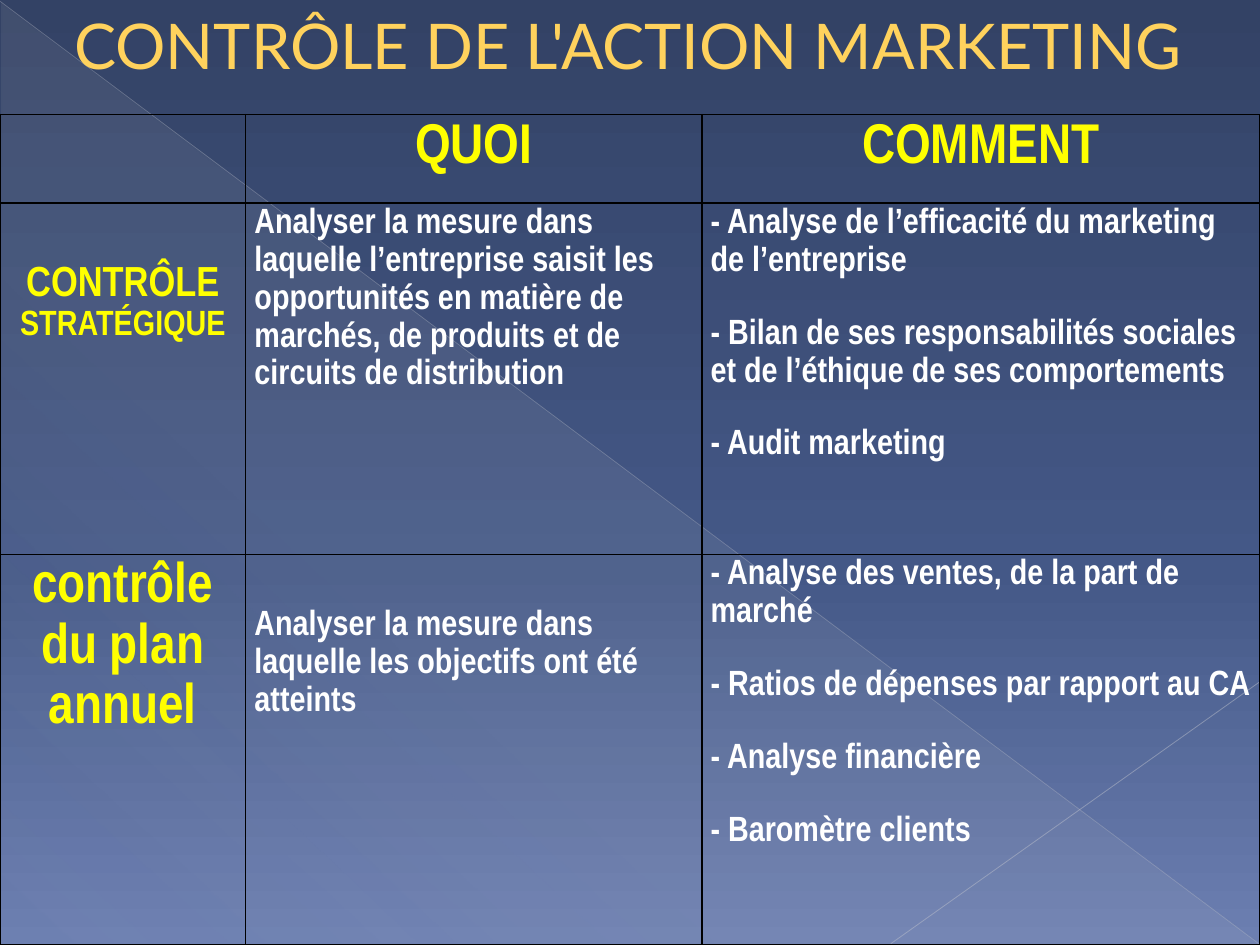
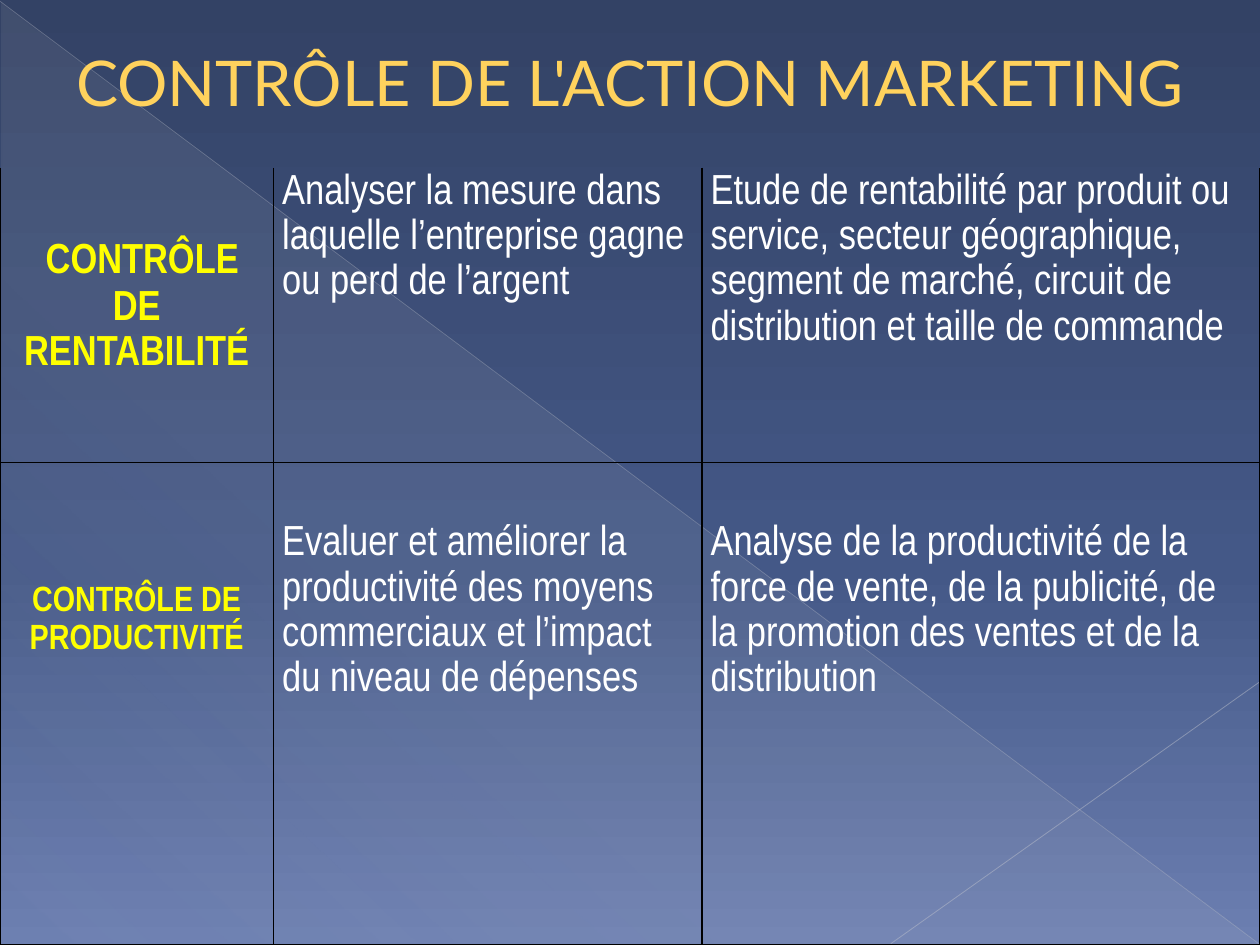
from lxml import etree
from pptx import Presentation
from pptx.dml.color import RGBColor
from pptx.enum.shapes import MSO_CONNECTOR, MSO_SHAPE
from pptx.enum.text import MSO_ANCHOR, PP_ALIGN
from pptx.oxml.ns import qn
from pptx.util import Inches, Pt

CENTER, LEFT = PP_ALIGN.CENTER, PP_ALIGN.LEFT
MIDDLE = MSO_ANCHOR.MIDDLE
STRAIGHT = MSO_CONNECTOR.STRAIGHT
RIGHT_TRIANGLE = MSO_SHAPE.RIGHT_TRIANGLE

GOLD = RGBColor(0xFF, 0xD2, 0x5D)
YELLOW = RGBColor(0xFF, 0xFF, 0x00)
WHITE = RGBColor(0xFF, 0xFF, 0xFF)
BLACK = RGBColor(0x00, 0x00, 0x00)
NIGHT = RGBColor(0x33, 0x42, 0x65)
NAVY = RGBColor(0x44, 0x58, 0x87)
PERIWINKLE = RGBColor(0x6C, 0x7F, 0xB1)
MIST = RGBColor(0xD4, 0xD4, 0xD6)
LONG_RAY = RGBColor(0xB9, 0xBD, 0xC8)
SHORT_RAY = RGBColor(0xC1, 0xC4, 0xCE)

TITLE = "CONTRÔLE DE L'ACTION MARKETING"
TITLE_FONT, TABLE_FONT = "Lato", "Arial Narrow"
NO_STYLE = "{2D5ABB26-0587-4C30-8999-92F81FD0307C}"
LINE_SPACING, PARAGRAPH_GAP = 1.15, Pt(10)

BACKGROUND_STOPS = [(0, NIGHT, 100), (60, NAVY, 100), (100, PERIWINKLE, 100)]
TRIANGLE_STOPS = [(0, MIST, 10), (70, MIST, 8), (100, MIST, 1)]
RAYS = [
    ((0, 0.01), (9.99, 7.49), LONG_RAY, 0.39, 35),
    ((10, 5.41), (7.07, 7.49), SHORT_RAY, 0.47, 45),
]


def heading(*runs, top=0):
    return {"paragraphs": [runs], "color": YELLOW, "bold": True, "align": CENTER, "top": top}


def body(*texts, size=20, bold=True, top=0):
    return {"paragraphs": [[(text, size)] for text in texts],
            "color": WHITE, "bold": bold, "align": LEFT, "top": top}


SLIDES = [
    {
        "title_box": (0.47, 0, 9.03, 0.71),
        "top": 0.91,
        "columns": [1.95, 3.62, 4.43],
        "rows": [0.7, 2.79, 3.1],
        "top_border": True,
        "cells": [
            [None, heading(("QUOI", 32)), heading(("COMMENT", 32))],
            [
                heading(("CONTRÔLE ", 24), ("STRATÉGIQUE", 20), top=0.45),
                body("Analyser la mesure dans laquelle l’entreprise saisit les opportunités "
                     "en matière de marchés, de produits et de circuits de distribution"),
                body("- Analyse de l’efficacité du marketing de l’entreprise",
                     "- Bilan de ses responsabilités sociales et de l’éthique de ses comportements",
                     "- Audit marketing"),
            ],
            [
                heading(("contrôle du plan annuel", 32)),
                body("Analyser la mesure dans laquelle les objectifs ont été atteints", top=0.4),
                body("- Analyse des ventes, de la part de marché",
                     "- Ratios de dépenses par rapport au CA",
                     "- Analyse financière",
                     "- Baromètre clients"),
            ],
        ],
    },
    {
        "title_box": (0.5, 0.29, 9, 0.71),
        "top": 1.33,
        "columns": [2.17, 3.4, 4.43],
        "rows": [2.34, 3.83],
        "top_border": False,
        "cells": [
            [
                heading((" ", 28), ("CONTRÔLE DE RENTABILITÉ", 24), top=0.5),
                body("Analyser la mesure dans laquelle l’entreprise gagne ou perd de l’argent",
                     size=24, bold=False),
                body("Etude de rentabilité par produit ou service, secteur géographique, segment "
                     "de marché, circuit de distribution et taille de commande",
                     size=24, bold=False),
            ],
            [
                heading(("CONTRÔLE DE PRODUCTIVITÉ", 20), top=0.94),
                body("Evaluer et améliorer la productivité des moyens commerciaux et l’impact "
                     "du niveau de dépenses", size=24, bold=False, top=0.45),
                body("Analyse de la productivité de la force de vente, de la publicité, de la "
                     "promotion des ventes et de la distribution", size=24, bold=False, top=0.45),
            ],
        ],
    },
]


def add_color(parent, color, opacity=100):
    element = etree.SubElement(parent, qn("a:srgbClr"), val=str(color))
    if opacity < 100:
        etree.SubElement(element, qn("a:alpha"), val=str(opacity * 1000))


def set_gradient(owner, fill, stops, angle):
    fill.gradient()
    gradient = next(owner.iter(qn("a:gradFill")))
    for child in list(gradient):
        gradient.remove(child)
    stop_list = etree.SubElement(gradient, qn("a:gsLst"))
    for position, color, opacity in stops:
        stop = etree.SubElement(stop_list, qn("a:gs"), pos=str(position * 1000))
        add_color(stop, color, opacity)
    etree.SubElement(gradient, qn("a:lin"), ang=str(angle * 60000), scaled="0")


def add_run(paragraph, text, *, font, size, color, bold=False):
    run = paragraph.add_run()
    run.text = text
    run.font.name = font
    run.font.size = Pt(size)
    run.font.bold = bold
    run.font.color.rgb = color


def decorate_master(master, slide):
    set_gradient(master.element, master.background.fill, BACKGROUND_STOPS, 90)
    triangle = slide.shapes.add_shape(
        RIGHT_TRIANGLE, Inches(0.01), Inches(0.02), Inches(9.99), Inches(7.48))
    triangle.shadow.inherit = False
    triangle.line.fill.background()
    set_gradient(triangle.element, triangle.fill, TRIANGLE_STOPS, 133)
    decorations = [triangle]
    for start, end, color, width, opacity in RAYS:
        ray = slide.shapes.add_connector(STRAIGHT, *map(Inches, start + end))
        ray.line.width = Pt(width)
        ray.line.color.rgb = color
        color_element = next(ray.element.spPr.iter(qn("a:srgbClr")))
        etree.SubElement(color_element, qn("a:alpha"), val=str(opacity * 1000))
        etree.SubElement(ray.element.spPr, qn("a:effectLst"))
        decorations.append(ray)
    for number, shape in enumerate(decorations, start=101):
        next(shape.element.iter(qn("p:cNvPr"))).set("id", str(number))
        master.shapes.element.append(shape.element) if hasattr(master.shapes, "element") \
            else master.placeholders[0].element.getparent().append(shape.element)


def add_title(slide, box):
    title = slide.shapes.title
    title.left, title.top, title.width, title.height = map(Inches, box)
    frame = title.text_frame
    frame.word_wrap = True
    frame.vertical_anchor = MIDDLE
    frame.margin_left = frame.margin_right = 0
    paragraph = frame.paragraphs[0]
    paragraph.alignment = CENTER
    add_run(paragraph, TITLE, font=TITLE_FONT, size=36, color=GOLD)


def set_borders(cell, sides):
    properties = cell._tc.get_or_add_tcPr()
    for index, side in enumerate(sides):
        line = etree.Element(qn(f"a:ln{side}"), w=str(Pt(1)))
        add_color(etree.SubElement(line, qn("a:solidFill")), BLACK)
        properties.insert(index, line)


def fill_cell(cell, content):
    cell.margin_left = cell.margin_right = Inches(0.07)
    cell.margin_top, cell.margin_bottom = Inches(content["top"]), 0
    frame = cell.text_frame
    for index, runs in enumerate(content["paragraphs"]):
        paragraph = frame.add_paragraph() if index else frame.paragraphs[0]
        paragraph.alignment = content["align"]
        paragraph.line_spacing = LINE_SPACING
        paragraph.space_before = PARAGRAPH_GAP
        if len(content["paragraphs"]) > 1:
            paragraph.space_after = PARAGRAPH_GAP
        for text, size in runs:
            add_run(paragraph, text, font=TABLE_FONT, size=size,
                    color=content["color"], bold=content["bold"])


def add_control_table(slide, spec_data):
    columns, rows = spec_data["columns"], spec_data["rows"]
    frame = slide.shapes.add_table(
        len(rows), len(columns), 0, Inches(spec_data["top"]),
        Inches(sum(columns)), Inches(sum(rows)))
    table = frame.table
    table.first_row = table.horz_banding = False
    next(frame.element.iter(qn("a:tableStyleId"))).text = NO_STYLE
    for column, width in zip(table.columns, columns):
        column.width = Inches(width)
    for row, height in zip(table.rows, rows):
        row.height = Inches(height)
    for row_index, contents in enumerate(spec_data["cells"]):
        sides = "LRTB" if row_index or spec_data["top_border"] else "LRB"
        for column_index, content in enumerate(contents):
            cell = table.cell(row_index, column_index)
            cell.fill.background()
            set_borders(cell, sides)
            if content:
                fill_cell(cell, content)


def main():
    presentation = Presentation()
    presentation.slide_width, presentation.slide_height = Inches(10), Inches(7.5)
    title_only = presentation.slide_layouts[5]
    for index, content in enumerate(SLIDES):
        slide = presentation.slides.add_slide(title_only)
        if index == 0:
            decorate_master(presentation.slide_master, slide)
        add_title(slide, content["title_box"])
        add_control_table(slide, content)
    presentation.save("out.pptx")


if __name__ == "__main__":
    main()
